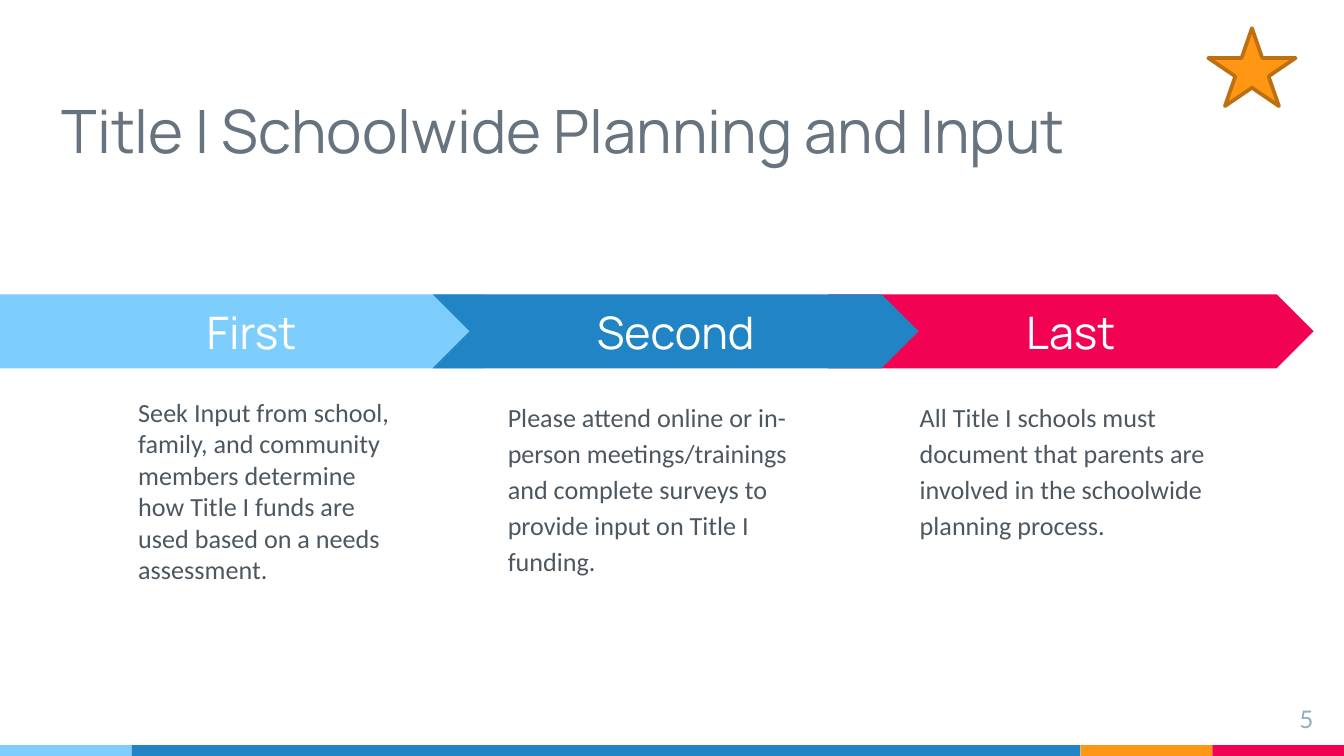
from collections import namedtuple

from pptx import Presentation
from pptx.dml.color import RGBColor
from pptx.enum.shapes import MSO_SHAPE
from pptx.enum.text import MSO_ANCHOR, PP_ALIGN
from pptx.util import Inches, Pt

COLORS = {
    "sky": "7ECEFD", "blue": "2185C5", "orange": "FF9715", "red": "F20253",
    "bronze": "BD7010", "slate": "677480", "body": "4D5760",
    "mist": "97ABBC", "white": "FFFFFF",
}
COLUMNS, ROWS = 100, 56.25
CELL = Inches(0.1)
BAND_ROWS = 5.5

Box = namedtuple("Box", "left top width height")
Step = namedtuple("Step", "heading geometry color arrow body spacing inset message")

STEPS = [
    Step("Last", MSO_SHAPE.CHEVRON, "red", Box(61.6, 21.9, 36.15, BAND_ROWS),
         Box(5.85, 6.6, 24.5, 21.9), 1.15, 1,
         "All Title I schools must document that parents are involved "
         "in the schoolwide planning process."),
    Step("First", MSO_SHAPE.PENTAGON, "sky", Box(0, 21.9, 38.8, BAND_ROWS),
         Box(9.3, 7.1, 21.8, 15.1), 1.0, 0.5,
         "Seek Input from school, family, and community members determine "
         "how Title I funds are used based on a needs assessment."),
    Step("Second", MSO_SHAPE.CHEVRON, "blue", Box(32.2, 21.9, 36.15, BAND_ROWS),
         Box(4.6, 6.6, 25.4, 22.4), 1.15, 1,
         "Please attend online or in-person meetings/trainings and complete "
         "surveys to provide input on Title I funding."),
]


def emu(box):
    """Convert a box in grid cells to slide units."""
    return [round(length * CELL) for length in box]


def write(shape, words, font, size, color, align=PP_ALIGN.LEFT,
          anchor=MSO_ANCHOR.TOP, spacing=1.0, inset=1):
    """Write one styled paragraph into a shape."""
    frame = shape.text_frame
    frame.word_wrap = True
    frame.vertical_anchor = anchor
    frame.margin_left = frame.margin_right = CELL
    frame.margin_top = frame.margin_bottom = round(inset * CELL)
    paragraph = frame.paragraphs[0]
    paragraph.text = words
    paragraph.alignment = align
    paragraph.line_spacing = spacing
    paragraph.font.name = font
    paragraph.font.size = Pt(size)
    paragraph.font.color.rgb = RGBColor.from_string(COLORS[color])


def add_filled(slide, geometry, box, color):
    """Add a flat shape without an outline."""
    shape = slide.shapes.add_shape(geometry, *emu(box))
    shape.shadow.inherit = False
    shape.fill.solid()
    shape.fill.fore_color.rgb = RGBColor.from_string(COLORS[color])
    shape.line.fill.background()
    return shape


def add_footer_stripe(slide, box):
    """Fill the box with the coloured stripe, left to right."""
    end = 9.8
    middle = box.width - 3 * end
    left = box.left
    for color, width in [("sky", end), ("blue", middle), ("orange", end), ("red", end)]:
        add_filled(slide, MSO_SHAPE.RECTANGLE, box._replace(left=left, width=width), color)
        left += width


def add_title(slide, box):
    """Place the slide title at the foot of the box."""
    write(slide.shapes.add_textbox(*emu(box)), "Title I Schoolwide Planning and Input",
          "Manrope", 32, "slate", anchor=MSO_ANCHOR.BOTTOM)


def add_step(slide, step):
    """Place a step arrow and its message, offset from the arrow."""
    arrow = add_filled(slide, step.geometry, step.arrow, step.color)
    arrow.adjustments[0] = 0.5
    write(arrow, step.heading, "Manrope", 24, "white", PP_ALIGN.CENTER, MSO_ANCHOR.MIDDLE)
    body = step.body._replace(left=step.arrow.left + step.body.left,
                              top=step.arrow.top + step.body.top)
    write(slide.shapes.add_textbox(*emu(body)), step.message, "Calibri", 14, "body",
          spacing=step.spacing, inset=step.inset)


def add_page_number(slide, box):
    """Place the page number at the right of the box."""
    write(slide.shapes.add_textbox(*emu(box)), "5", "Lato", 13, "mist", PP_ALIGN.RIGHT)


def add_star(slide, box):
    """Place the outlined star."""
    star = add_filled(slide, MSO_SHAPE.STAR_5_POINT, box, "orange")
    star.line.color.rgb = RGBColor.from_string(COLORS["bronze"])
    star.line.width = Pt(2)


def main():
    """Build and save the slide."""
    deck = Presentation()
    deck.slide_width, deck.slide_height = round(COLUMNS * CELL), round(ROWS * CELL)
    slide = deck.slides.add_slide(deck.slide_layouts[6])
    add_footer_stripe(slide, Box(0, ROWS - 0.8, COLUMNS, 0.8))
    add_title(slide, Box(3.6, 3.9, 82.3, 9.4))
    for step in STEPS:
        add_step(slide, step)
    add_page_number(slide, Box(92.7, 51.4, 6, 3.4))
    add_star(slide, Box(89.9, 2.1, 6.5, 5.8))
    deck.save("out.pptx")


if __name__ == "__main__":
    main()
